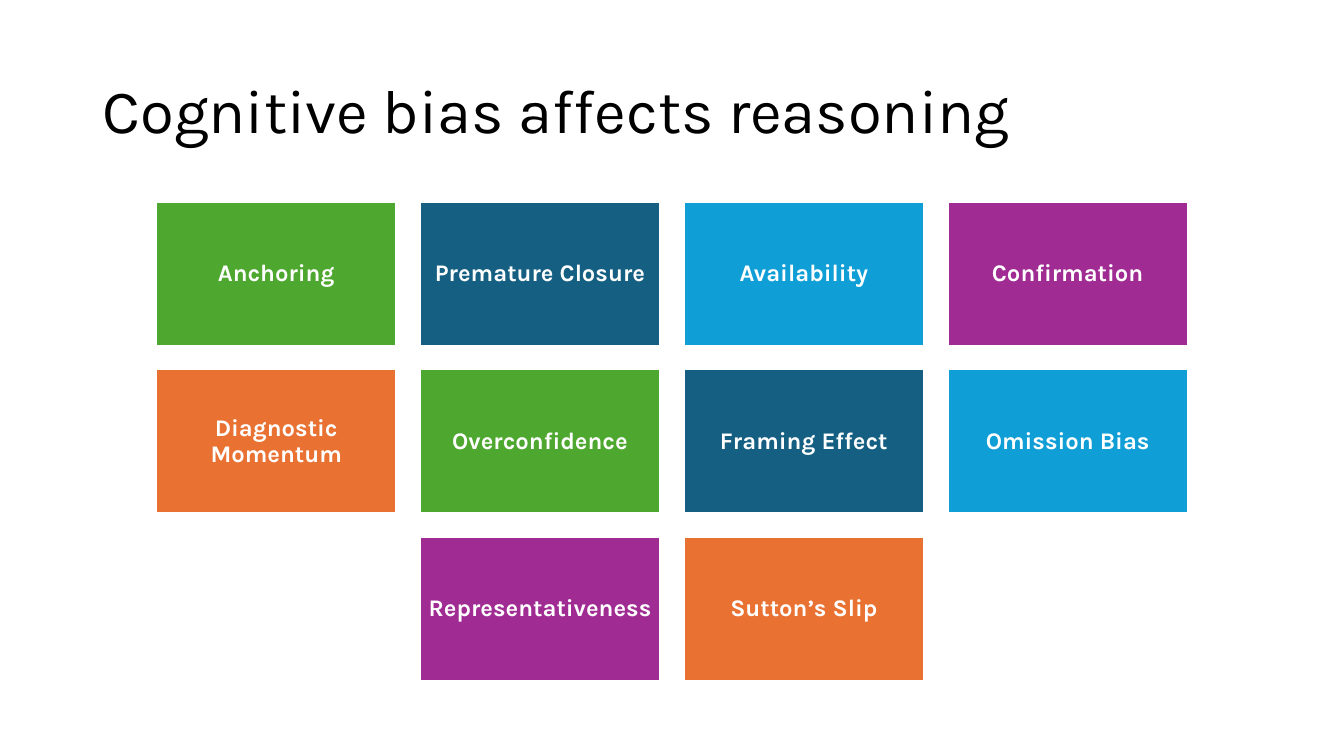
import pptx
import pptx.util
import pptx.dml.color
import pptx.enum.shapes
import pptx.enum.text

Inches = pptx.util.Inches
Pt = pptx.util.Pt
ALIGN = pptx.enum.text.PP_ALIGN

FONT = "Karla"
COLORS = {
    "green": "4EA72E",
    "navy": "156082",
    "sky": "0F9ED5",
    "plum": "A02B93",
    "orange": "E97132",
    "white": "FFFFFF",
    "black": "000000",
}
CYCLE = ["green", "navy", "sky", "plum", "orange"]
BIASES = [
    "Anchoring", "Premature Closure", "Availability", "Confirmation",
    "Diagnostic Momentum", "Overconfidence", "Framing Effect", "Omission Bias",
    "Representativeness", "Sutton’s Slip",
]
COLS = 4
TILE_W, TILE_H = 2.38, 1.43


def color(name):
    return pptx.dml.color.RGBColor.from_string(COLORS[name])


def write(shape, text, size, tint, align, bold=False):
    frame = shape.text_frame
    frame.word_wrap = True
    frame.vertical_anchor = pptx.enum.text.MSO_ANCHOR.MIDDLE
    para = frame.paragraphs[0]
    para.alignment = align
    para.line_spacing = 0.9
    run = para.add_run()
    run.text = text
    run.font.name = FONT
    run.font.size = Pt(size)
    run.font.bold = bold
    run.font.color.rgb = color(tint)


def add_title(slide, left, top, width, height):
    box = slide.shapes.add_textbox(
        Inches(left), Inches(top), Inches(width), Inches(height))
    write(box, "Cognitive bias affects reasoning", 44, "black", ALIGN.LEFT)


def add_tile(slide, left, top, text, tint):
    tile = slide.shapes.add_shape(
        pptx.enum.shapes.MSO_SHAPE.RECTANGLE,
        Inches(left), Inches(top), Inches(TILE_W), Inches(TILE_H))
    tile.shadow.inherit = False
    tile.fill.solid()
    tile.fill.fore_color.rgb = color(tint)
    tile.line.color.rgb = color("white")
    tile.line.width = Pt(1.5)
    frame = tile.text_frame
    frame.margin_left = frame.margin_right = Inches(0.07)
    frame.margin_top = frame.margin_bottom = Inches(0.07)
    write(tile, text, 17, "white", ALIGN.CENTER, bold=True)


def add_grid(slide, left, top, width, height):
    rows = [BIASES[i:i + COLS] for i in range(0, len(BIASES), COLS)]
    step_x = (width - TILE_W) / (COLS - 1)
    step_y = (height - TILE_H) / (len(rows) - 1)
    for r, row in enumerate(rows):
        # A short row is centred in the grid
        shift = (COLS - len(row)) / 2
        for c, text in enumerate(row):
            tint = CYCLE[(r * COLS + c) % len(CYCLE)]
            add_tile(slide, left + (c + shift) * step_x,
                     top + r * step_y, text, tint)


def main():
    deck = pptx.Presentation()
    deck.slide_width = Inches(13.33)
    deck.slide_height = Inches(7.5)
    slide = deck.slides.add_slide(deck.slide_layouts[6])
    # Heading
    add_title(slide, 0.92, 0.4, 11.5, 1.45)
    # Bias tiles
    add_grid(slide, 1.55, 2, 10.23, 4.76)
    deck.save("out.pptx")


if __name__ == "__main__":
    main()
